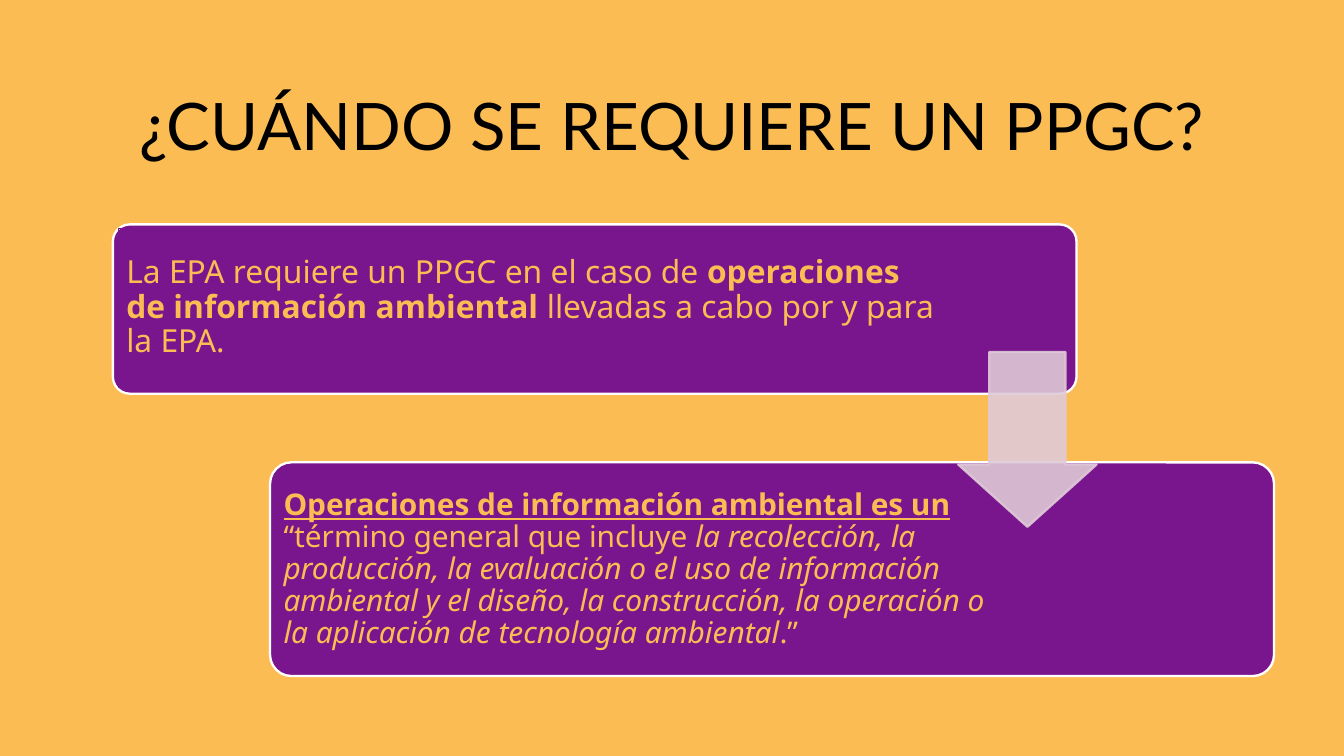
from lxml import etree
from pptx import Presentation
from pptx import util as u
from pptx.dml import color
from pptx.enum import shapes, text
from pptx.oxml import ns

BACKGROUND = "FBBD53"
PURPLE = "79168D"
ARROW = "E0CAD8"


def rgb(value):
    return color.RGBColor.from_string(value)


class SlideBuilder:
    body_font = "Noto Sans"
    title_font = "Lato"

    def __init__(self, deck):
        self.slide = deck.slides.add_slide(deck.slide_layouts[6])
        fill = self.slide.background.fill
        fill.solid()
        fill.fore_color.rgb = rgb(BACKGROUND)

    def shape(self, kind, place, fill, line, width=1.25, adjustments=()):
        shape = self.slide.shapes.add_shape(kind, *map(u.Inches, place))
        shape.shadow.inherit = False
        if fill:
            shape.fill.solid()
            shape.fill.fore_color.rgb = rgb(fill)
        else:
            shape.fill.background()
        shape.line.color.rgb = rgb(line)
        shape.line.width = u.Pt(width)
        for index, value in enumerate(adjustments):
            shape.adjustments[index] = value
        return shape

    def panel(self, place):
        return self.shape(shapes.MSO_SHAPE.ROUNDED_RECTANGLE, place,
                          PURPLE, "FFFFFF", adjustments=[0.1])

    def arrow(self, place, opacity):
        arrow = self.shape(shapes.MSO_SHAPE.DOWN_ARROW, place,
                           ARROW, ARROW, adjustments=[0.55, 0.45])
        for solid in arrow.element.spPr.iter(ns.qn("a:solidFill")):
            alpha = etree.SubElement(solid[0], ns.qn("a:alpha"))
            alpha.set("val", str(opacity * 1000))

    def text_box(self, place):
        return self.slide.shapes.add_textbox(*map(u.Inches, place))

    def paragraph(self, box, spans, size, font, ink, align, insets):
        frame = box.text_frame
        frame.word_wrap = True
        frame.vertical_anchor = text.MSO_ANCHOR.MIDDLE
        frame.margin_left = frame.margin_right = u.Inches(insets[0])
        frame.margin_top = frame.margin_bottom = u.Inches(insets[1])
        para = frame.paragraphs[0]
        para.alignment = align
        para.font.size = u.Pt(size)
        para.font.name = font
        para.font.color.rgb = rgb(ink)
        for words, marks in spans:
            span = para.add_run()
            span.text = words
            span.font.bold = "b" in marks
            span.font.italic = "i" in marks
            span.font.underline = "u" in marks
        return para

    def title(self, place, words):
        self.paragraph(self.text_box(place), [(words, "")], 35.1, self.title_font,
                       "000000", text.PP_ALIGN.CENTER, (0.07, 0.04))

    def body(self, box, spans, size):
        para = self.paragraph(box, spans, size, self.body_font, BACKGROUND,
                              text.PP_ALIGN.LEFT, (0.06, 0.06))
        para.line_spacing = 0.9


def main():
    deck = Presentation()
    deck.slide_width = u.Inches(10)
    deck.slide_height = u.Inches(10 * 9 / 16)
    page = SlideBuilder(deck)

    page.title((0.69, 0.46, 8.62, 0.93), "¿CUÁNDO SE REQUIERE UN PPGC?")
    page.panel((0.84, 1.67, 7.17, 1.26))
    page.panel((2.01, 3.44, 7.47, 1.59))
    page.body(page.text_box((2.05, 3.49, 5.47, 1.5)), [
        ("Operaciones", "bu"),
        (" ", "u"),
        ("de información ambiental es un", "bu"),
        (" “término general que incluye ", ""),
        ("la recolección, la producción, la evaluación o el uso de información "
         "ambiental y el diseño, la construcción, la operación o la aplicación "
         "de tecnología ambiental", "i"),
        (".”", ""),
    ], 16)
    page.arrow((7.13, 2.62, 1.03, 1.3), 89)
    requirement = page.shape(shapes.MSO_SHAPE.RECTANGLE, (0.88, 1.7, 6.18, 1.18),
                             None, PURPLE, 0.75)
    page.body(requirement, [
        ("La EPA requiere un PPGC en el caso de ", ""),
        ("operaciones de información ambiental ", "b"),
        ("llevadas a cabo por y para la EPA.", ""),
    ], 17)

    deck.save("out.pptx")


if __name__ == "__main__":
    main()
